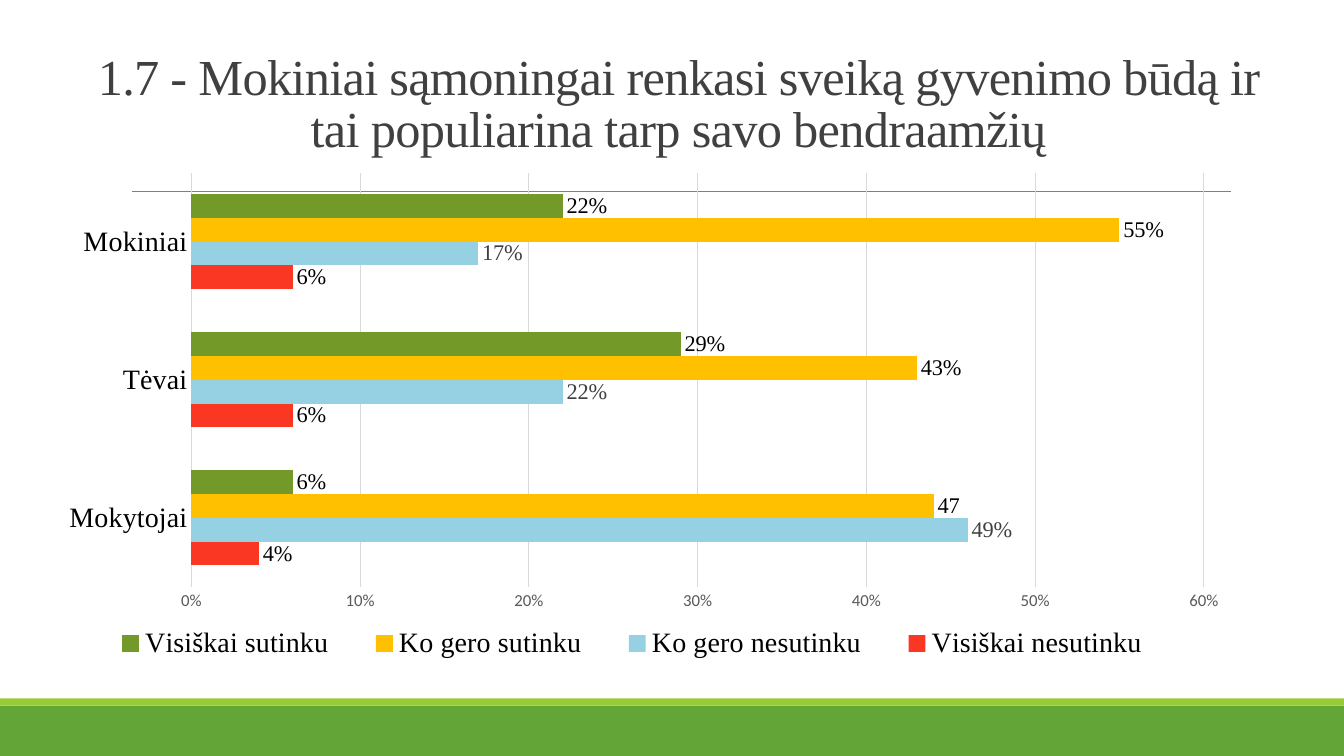
from dataclasses import dataclass, field

from lxml import etree
from pptx import Presentation
from pptx.chart.data import CategoryChartData
from pptx.dml.color import RGBColor
from pptx.enum.chart import XL_CHART_TYPE, XL_LABEL_POSITION, XL_LEGEND_POSITION, XL_TICK_MARK
from pptx.enum.shapes import MSO_CONNECTOR, MSO_SHAPE
from pptx.enum.text import MSO_ANCHOR, PP_ALIGN
from pptx.oxml.ns import qn
from pptx.util import Cm, Pt

BAR_CLUSTERED = XL_CHART_TYPE.BAR_CLUSTERED
OUTSIDE_END = XL_LABEL_POSITION.OUTSIDE_END
LEGEND_BOTTOM = XL_LEGEND_POSITION.BOTTOM
NO_TICK = XL_TICK_MARK.NONE
STRAIGHT = MSO_CONNECTOR.STRAIGHT
RECTANGLE = MSO_SHAPE.RECTANGLE
BOTTOM = MSO_ANCHOR.BOTTOM
CENTER = PP_ALIGN.CENTER

SERIF = "Times New Roman"
SANS = "Calibri"
COLORS = {
    "title": "404040",
    "black": "000000",
    "axis": "595959",
    "grid": "D9D9D9",
    "rule": "808080",
    "footer": "63A537",
    "footer_edge": "99CB38",
    "strongly_agree": "739A28",
    "agree": "FFC000",
    "disagree": "95D1E2",
    "strongly_disagree": "FA3722",
}
GROUPS = ("Mokytojai", "Tėvai", "Mokiniai")


@dataclass
class Band:
    top: float
    height: float
    color: str


@dataclass
class Answer:
    name: str
    shares: tuple[float, ...]
    color: str
    label_color: str = "black"
    custom_labels: dict[int, str] = field(default_factory=dict)


BANDS = (Band(17.78, 1.27, "footer"), Band(17.6, 0.18, "footer_edge"))
ANSWERS = (
    Answer("Visiškai nesutinku", (0.04, 0.06, 0.06), "strongly_disagree"),
    Answer("Ko gero nesutinku", (0.46, 0.22, 0.17), "disagree", "title", {0: "49%"}),
    Answer("Ko gero sutinku", (0.44, 0.43, 0.55), "agree", "black", {0: "47"}),
    Answer("Visiškai sutinku", (0.06, 0.29, 0.22), "strongly_agree"),
)


def rgb(name: str) -> RGBColor:
    return RGBColor.from_string(COLORS[name])


def style_font(font, size: float, color: str, family: str) -> None:
    font.size = Pt(size)
    font.name = family
    font.bold = False
    font.color.rgb = rgb(color)


def style_line(line, color: str, width: float) -> None:
    line.color.rgb = rgb(color)
    line.width = Pt(width)


def draw_band(slide, band: Band, width: int) -> None:
    bar = slide.shapes.add_shape(RECTANGLE, 0, Cm(band.top), width, Cm(band.height))
    bar.shadow.inherit = False
    bar.fill.solid()
    bar.fill.fore_color.rgb = rgb(band.color)
    bar.line.fill.background()


def draw_rule(slide) -> None:
    rule = slide.shapes.add_connector(STRAIGHT, Cm(3.33), Cm(4.83), Cm(31.01), Cm(4.83))
    style_line(rule.line, "rule", 0.5)
    etree.SubElement(rule._element.spPr, qn("a:effectLst"))


def draw_title(slide) -> None:
    title = slide.shapes.add_textbox(Cm(1.57), Cm(1.09), Cm(31.06), Cm(3))
    frame = title.text_frame
    frame.word_wrap = True
    frame.vertical_anchor = BOTTOM
    frame.text = ("1.7 - Mokiniai sąmoningai renkasi sveiką gyvenimo būdą ir "
                  "tai populiarina tarp savo bendraamžių")
    heading = frame.paragraphs[0]
    heading.alignment = CENTER
    heading.line_spacing = 0.85
    run = heading.runs[0]
    style_font(run.font, 36, "title", SERIF)
    run._r.get_or_add_rPr().set("spc", "-50")


def place(part, index: int, x: float, y: float, w: float, h: float, inner: bool = False) -> None:
    """Fix a chart part at fractions of the chart area."""
    for old in part.findall(qn("c:layout")):
        part.remove(old)
    layout = etree.Element(qn("c:layout"))
    manual = etree.SubElement(layout, qn("c:manualLayout"))
    settings = {"layoutTarget": "inner"} if inner else {}
    settings |= {"xMode": "edge", "yMode": "edge", "x": x, "y": y, "w": w, "h": h}
    for tag, value in settings.items():
        etree.SubElement(manual, qn(f"c:{tag}")).set("val", str(value))
    part.insert(index, layout)


def style_answer(series, answer: Answer) -> None:
    series.format.fill.solid()
    series.format.fill.fore_color.rgb = rgb(answer.color)
    series.invert_if_negative = False
    labels = series.data_labels
    labels.show_value = True
    labels.number_format = "0%"
    labels.number_format_is_linked = False
    labels.position = OUTSIDE_END
    style_font(labels.font, 16, answer.label_color, SERIF)
    for point, text in answer.custom_labels.items():
        label = series.points[point].data_label
        label.text_frame.text = text
        style_font(label.text_frame.paragraphs[0].runs[0].font, 16, answer.label_color, SERIF)
        label.position = OUTSIDE_END


def draw_chart(slide) -> None:
    survey = CategoryChartData(number_format="0%")
    survey.categories = GROUPS
    for answer in ANSWERS:
        survey.add_series(answer.name, answer.shares)
    chart = slide.shapes.add_chart(
        BAR_CLUSTERED, Cm(1.22), Cm(4.09), Cm(30.02), Cm(12.9), survey).chart
    chart.has_title = False
    style_font(chart.font, 10, "black", SANS)

    # Bars and labels
    plot = chart.plots[0]
    plot.gap_width = 182
    plot.overlap = 0
    plot.vary_by_categories = False
    for series, answer in zip(plot.series, ANSWERS):
        style_answer(series, answer)

    # Axes
    groups, shares = chart.category_axis, chart.value_axis
    for axis in (groups, shares):
        axis.major_tick_mark = axis.minor_tick_mark = NO_TICK
    style_font(groups.tick_labels.font, 20, "black", SERIF)
    style_line(groups.format.line, "grid", 0.75)
    style_font(shares.tick_labels.font, 12, "axis", SANS)
    shares.tick_labels.number_format = "0%"
    shares.tick_labels.number_format_is_linked = False
    shares.minimum_scale, shares.maximum_scale, shares.major_unit = 0, 0.6, 0.1
    shares.format.line.fill.background()
    shares.has_major_gridlines = True
    style_line(shares.major_gridlines.format.line, "grid", 0.75)

    # Legend and layout
    chart.has_legend = True
    chart.legend.position = LEGEND_BOTTOM
    chart.legend.include_in_layout = False
    style_font(chart.legend.font, 20, "black", SERIF)
    place(chart.legend._element, 1, 0.03, 0.89, 0.92, 0.1)
    place(plot._element.getparent(), 0, 0.12, 0.02, 0.85, 0.81, inner=True)


def main() -> None:
    deck = Presentation()
    deck.slide_width, deck.slide_height = Cm(33.87), Cm(19.05)
    slide = deck.slides.add_slide(deck.slide_layouts[6])
    for band in BANDS:
        draw_band(slide, band, deck.slide_width)
    draw_rule(slide)
    draw_title(slide)
    draw_chart(slide)
    deck.save("out.pptx")


if __name__ == "__main__":
    main()
